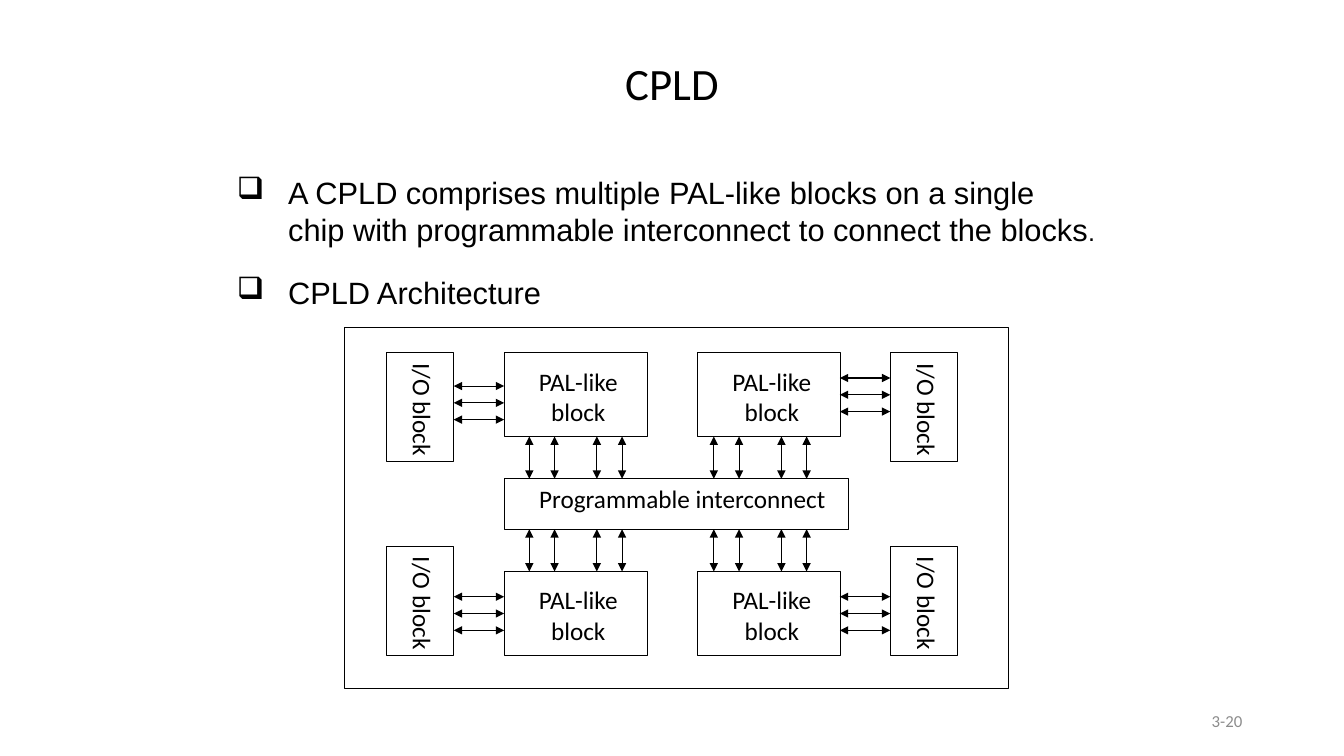
"""Build the CPLD architecture slide."""
from itertools import product

from lxml.etree import SubElement
from pptx import Presentation
from pptx.dml.color import RGBColor
from pptx.enum.shapes import MSO_CONNECTOR, MSO_SHAPE
from pptx.enum.text import MSO_ANCHOR, PP_ALIGN
from pptx.oxml.ns import qn
from pptx.util import Inches, Pt

COLORS = {"ink": "000000", "paper": "FFFFFF", "muted": "8C8C8C"}


class CpldSlide:
    def __init__(self, slide):
        self.slide = slide
        self.line_width = Pt(0.75)

    def color(self, name):
        return RGBColor.from_string(COLORS[name])

    def style(self, run, size, font, color="ink"):
        run.font.size = Pt(size)
        run.font.name = font
        run.font.color.rgb = self.color(color)

    def label(self, at, text, size=18, font="Calibri", color="ink",
              align=PP_ALIGN.LEFT, wrap=False, rotation=0):
        box = self.slide.shapes.add_textbox(*map(Inches, at))
        box.rotation = rotation
        frame = box.text_frame
        frame.word_wrap = wrap
        frame.text = text
        for paragraph in frame.paragraphs:
            paragraph.alignment = align
            for run in paragraph.runs:
                self.style(run, size, font, color)
        return frame

    def bullet(self, at, text):
        paragraph = self.label(at, text, 22, "Arial", wrap=True).paragraphs[0]
        properties = paragraph._p.get_or_add_pPr()
        properties.set("marL", str(Inches(0.51)))
        properties.set("indent", str(-Inches(0.51)))
        SubElement(properties, qn("a:buChar"), char="❑")
        return paragraph

    def block(self, *at):
        rect = self.slide.shapes.add_shape(MSO_SHAPE.RECTANGLE, *map(Inches, at))
        rect.shadow.inherit = False
        rect.fill.solid()
        rect.fill.fore_color.rgb = self.color("paper")
        rect.line.color.rgb = self.color("ink")
        rect.line.width = self.line_width

    def bus(self, *ends):
        wire = self.slide.shapes.add_connector(MSO_CONNECTOR.STRAIGHT, *map(Inches, ends))
        wire.line.color.rgb = self.color("ink")
        wire.line.width = self.line_width
        outline = wire.line._get_or_add_ln()
        for end in ("a:headEnd", "a:tailEnd"):
            SubElement(outline, qn(end), type="triangle")
        SubElement(wire._element.spPr, qn("a:effectLst"))


def main():
    deck = Presentation()
    deck.slide_width, deck.slide_height = Inches(13.33), Inches(7.5)
    cpld = CpldSlide(deck.slides.add_slide(deck.slide_layouts[6]))

    page_number = cpld.label((9.42, 6.95, 3, 0.4), "3-20", 12, color="muted",
                             align=PP_ALIGN.RIGHT, wrap=True)
    page_number.vertical_anchor = MSO_ANCHOR.MIDDLE
    cpld.label((2.25, 0.5, 8.83, 0.63), "CPLD", 32, align=PP_ALIGN.CENTER, wrap=True)
    definition = cpld.bullet(
        (2.25, 1.67, 8.75, 0.83),
        "A CPLD comprises multiple PAL-like blocks on a single\v"
        "chip with programmable interconnect to connect the blocks")
    full_stop = definition.add_run()
    full_stop.text = "."
    cpld.style(full_stop, 18, "Arial")
    cpld.bullet((2.25, 2.67, 8.75, 0.47), "CPLD Architecture")

    cpld.block(3.42, 3.25, 6.58, 3.58)
    cpld.block(5, 4.75, 3.42, 0.5)
    cpld.label((5.25, 4.75, 3.07, 0.4), "Programmable interconnect")

    for left, top in product((5, 6.92), (3.5, 5.67)):
        cpld.block(left, top, 1.42, 0.83)
        cpld.label((left + 0.24, top + 0.08, 0.99, 0.71), "PAL-like\nblock",
                   align=PP_ALIGN.CENTER)
    for left, top in product((3.83, 8.83), (3.5, 5.42)):
        cpld.block(left, top, 0.67, 1.08)
        cpld.label((left - 0.21, top + 0.38, 1.15, 0.4), "I/O block", rotation=90)

    io_buses = ((4.5, 3.83), (4.5, 5.92), (8.33, 3.75), (8.33, 5.92))
    for (left, first), wire in product(io_buses, range(3)):
        y = first + wire / 6
        cpld.bus(left, y, left + 0.5, y)
    for first, offset, top in product((5.25, 7.08), (0, 0.25, 0.67, 0.92), (4.33, 5.25)):
        cpld.bus(first + offset, top, first + offset, top + 0.42)

    deck.save("out.pptx")


if __name__ == "__main__":
    main()
